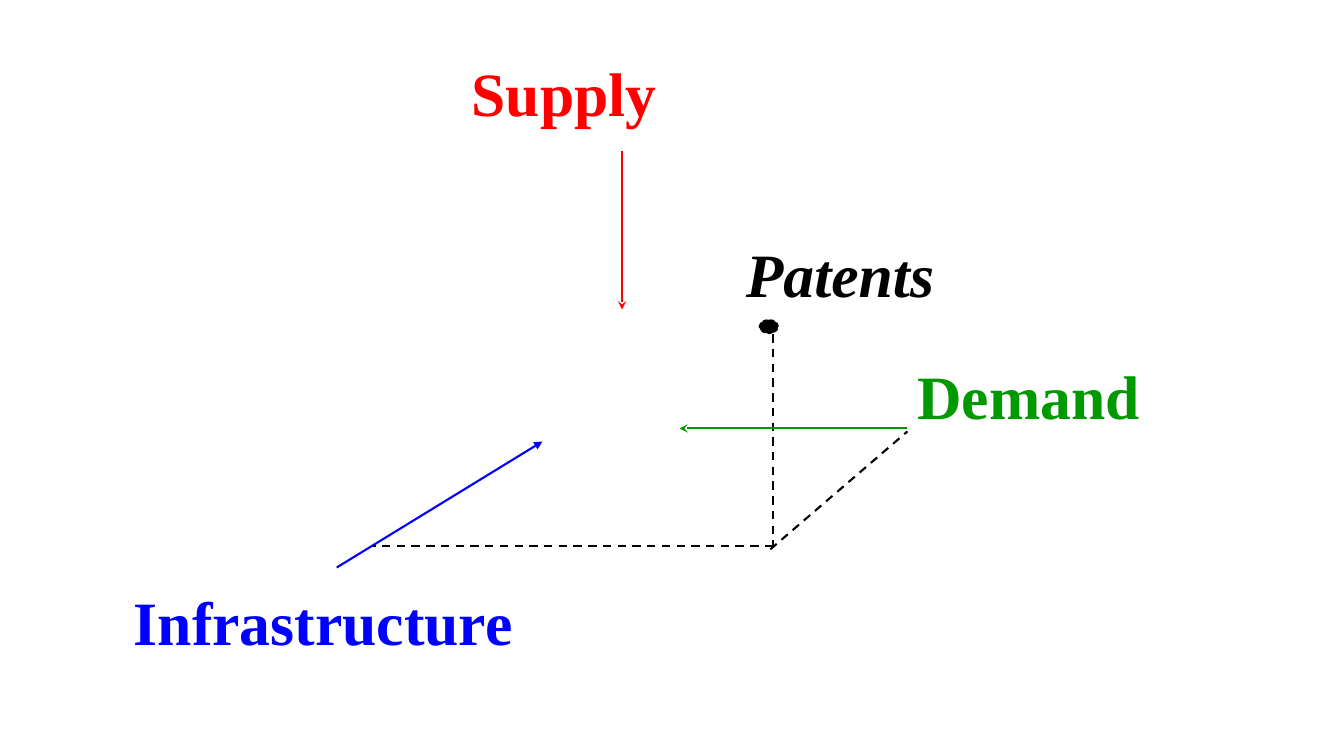
from lxml import etree
from pptx import Presentation
from pptx.dml.color import RGBColor
from pptx.enum import dml, shapes, text
from pptx.oxml.ns import qn
from pptx.util import Inches, Pt

BLACK, RED, GREEN, BLUE = "000000", "FF0000", "009900", "0000FF"


def color(hex_value):
    return RGBColor.from_string(hex_value)


def set_all(target, **values):
    for name, value in values.items():
        setattr(target, name, value)


def add_line(slide, start, end, hex_value, arrow=None):
    """Draw a dashed line, or a solid one with an arrowhead at its end."""
    points = [Inches(value) for value in (*start, *end)]
    line = slide.shapes.add_connector(shapes.MSO_CONNECTOR.STRAIGHT, *points)
    line.line.color.rgb = color(hex_value)
    line.line.width = Pt(1.5)
    if arrow:
        etree.SubElement(line.line._get_or_add_ln(), qn("a:tailEnd"), type=arrow)
    else:
        line.line.dash_style = dml.MSO_LINE.DASH
    etree.SubElement(line._element.spPr, qn("a:effectLst"))


def add_dot(slide, left, top, width, height):
    area = [Inches(value) for value in (left, top, width, height)]
    dot = slide.shapes.add_shape(shapes.MSO_SHAPE.OVAL, *area)
    dot.shadow.inherit = False
    dot.fill.solid()
    dot.fill.fore_color.rgb = color(BLACK)
    dot.line.color.rgb = color(BLACK)
    set_all(dot.line, width=Pt(0.75), dash_style=dml.MSO_LINE.DASH)


def add_label(slide, words, area, hex_value, italic=False):
    box = slide.shapes.add_textbox(*[Inches(value) for value in area])
    frame = box.text_frame
    set_all(frame, word_wrap=True, vertical_anchor=text.MSO_ANCHOR.TOP,
            margin_top=Inches(0.11))
    span = frame.paragraphs[0].add_run()
    span.text = words
    set_all(span.font, name="Times New Roman", size=Pt(44), bold=True, italic=italic)
    span.font.color.rgb = color(hex_value)


def main():
    deck = Presentation()
    set_all(deck, slide_width=Inches(13.33), slide_height=Inches(7.5))
    slide = deck.slides.add_slide(deck.slide_layouts[6])

    add_line(slide, (7.67, 3.17), (7.67, 5.42), BLACK)
    add_line(slide, (6.17, 1.5), (6.17, 3.07), RED, "stealth")
    add_line(slide, (9, 4.25), (6.74, 4.25), GREEN, "stealth")
    add_line(slide, (3.34, 5.63), (5.38, 4.38), BLUE, "triangle")
    add_dot(slide, 7.53, 3.17, 0.19, 0.14)
    add_line(slide, (7.67, 5.42), (3.7, 5.42), BLACK)
    add_line(slide, (7.64, 5.45), (9, 4.28), BLACK)

    add_label(slide, "Patents", (7.3, 2.23, 2.5, 0.67), BLACK, italic=True)
    add_label(slide, "Demand", (9, 3.44, 3.17, 0.67), GREEN)
    add_label(slide, "Infrastructure", (1.23, 5.68, 3.96, 0.71), BLUE)
    add_label(slide, "Supply", (4.58, 0.44, 2.72, 0.5), RED)

    deck.save("out.pptx")


if __name__ == "__main__":
    main()
